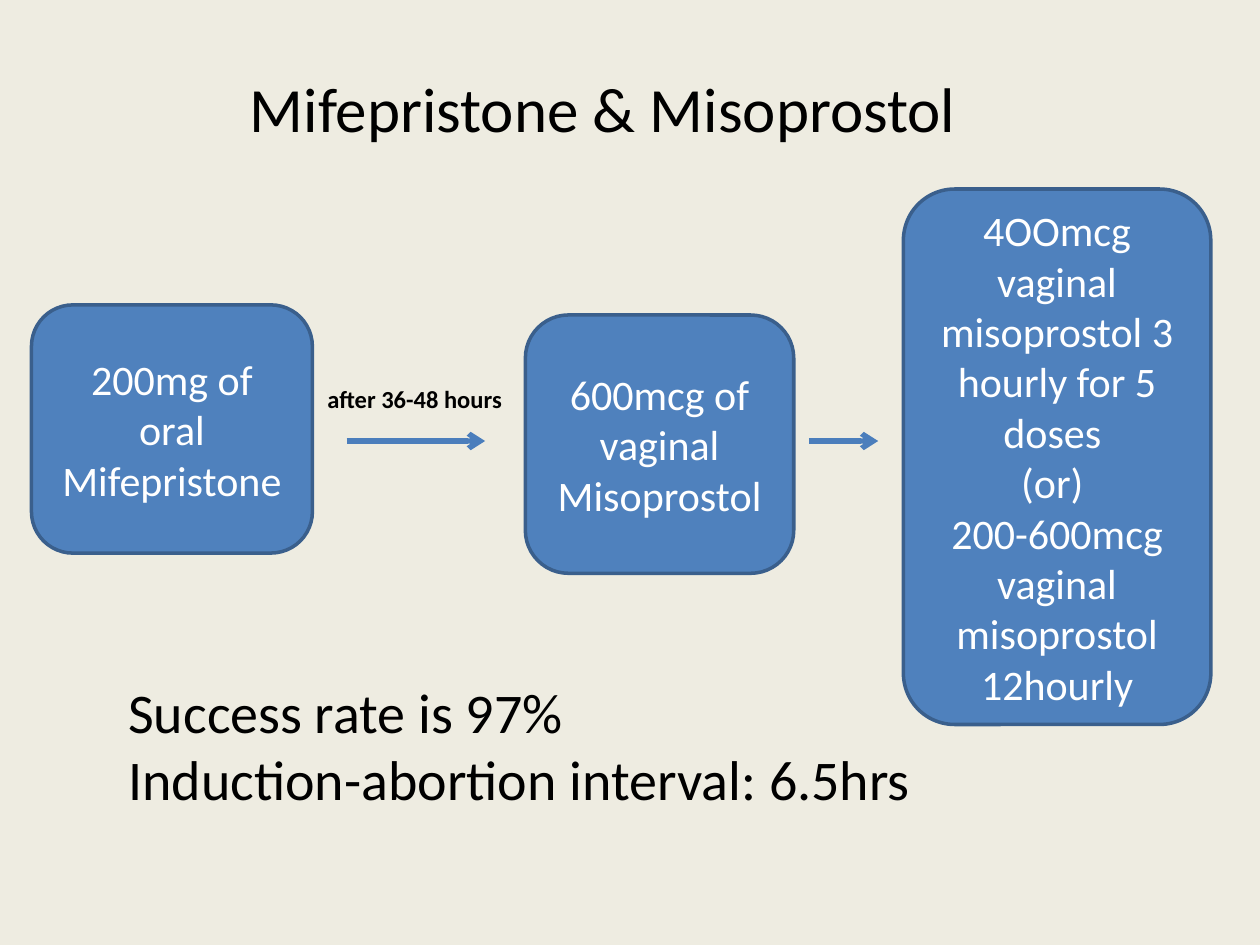
"""Build the slide on mifepristone and misoprostol dosing."""
from dataclasses import dataclass

from lxml import etree
from pptx import Presentation
from pptx import util as u
from pptx.dml.color import RGBColor
from pptx.enum import shapes, text
from pptx.oxml import ns

WIDE, HIGH = u.Inches(10), u.Inches(7.5)
COLS, ROWS = 40, 30
FONT = "Calibri"
HUES = {
    "back": "EEECE1",
    "box": "4F81BD",
    "edge": "3A5F8C",
    "arrow": "4B7EBC",
    "ink": "000000",
    "pale": "FFFFFF",
}


@dataclass(frozen=True)
class Area:
    col: float
    row: float
    cols: float
    rows: float

    def spans(self) -> tuple:
        return across(self.col), down(self.row), across(self.cols), down(self.rows)


@dataclass(frozen=True)
class Note:
    area: Area
    lines: tuple
    size: int
    bold: bool = False
    align: text.PP_ALIGN = text.PP_ALIGN.LEFT


@dataclass(frozen=True)
class Step:
    area: Area
    lines: tuple


@dataclass(frozen=True)
class Arrow:
    start: float
    end: float
    row: float


NOTES = (
    Note(Area(2, 2, 34.28, 2.84), ("Mifepristone & Misoprostol",), 36,
         align=text.PP_ALIGN.CENTER),
    Note(Area(10, 12, 7, 1.36), ("after 36-48 hours",), 14, bold=True),
    Note(Area(3.68, 21.32, 28, 4.72),
         ("Success rate is 97%", "Induction-abortion interval: 6.5hrs"), 32),
)
STEPS = (
    Step(Area(1, 9.68, 8.92, 7.88), ("200mg of oral Mifepristone",)),
    Step(Area(16.68, 10, 8.52, 8.2), ("600mcg of vaginal Misoprostol",)),
    Step(Area(28.68, 6, 9.76, 17),
         ("4OOmcg vaginal misoprostol 3 hourly for 5 doses ", "(or) ",
          "200-600mcg vaginal misoprostol 12hourly")),
)
ARROWS = (Arrow(11, 15.4, 14), Arrow(25.68, 27.88, 14))


def across(cols: float) -> int:
    return round(WIDE * cols / COLS)


def down(rows: float) -> int:
    return round(HIGH * rows / ROWS)


def hue(name: str) -> RGBColor:
    return RGBColor.from_string(HUES[name])


def write(frame, lines: tuple, size: int, ink: str, align, bold: bool = False) -> None:
    frame.word_wrap = True
    for i, line in enumerate(lines):
        para = frame.paragraphs[0] if i == 0 else frame.add_paragraph()
        para.alignment = align
        run = para.add_run()
        run.text = line
        font = run.font
        font.name, font.size, font.bold = FONT, u.Pt(size), bold
        font.color.rgb = hue(ink)


def add_note(slide, note: Note) -> None:
    frame = slide.shapes.add_textbox(*note.area.spans()).text_frame
    frame.auto_size = text.MSO_AUTO_SIZE.SHAPE_TO_FIT_TEXT
    write(frame, note.lines, note.size, "ink", note.align, note.bold)


def add_step(slide, step: Step) -> None:
    box = slide.shapes.add_shape(shapes.MSO_SHAPE.ROUNDED_RECTANGLE, *step.area.spans())
    box.shadow.inherit = False
    box.fill.solid()
    box.fill.fore_color.rgb = hue("box")
    box.line.color.rgb = hue("edge")
    box.line.width = u.Pt(2)
    box.text_frame.vertical_anchor = text.MSO_ANCHOR.MIDDLE
    write(box.text_frame, step.lines, 24, "pale", text.PP_ALIGN.CENTER)


def add_arrow(slide, arrow: Arrow) -> None:
    row = down(arrow.row)
    link = slide.shapes.add_connector(
        shapes.MSO_CONNECTOR.STRAIGHT, across(arrow.start), row, across(arrow.end), row)
    link.line.color.rgb = hue("arrow")
    link.line.width = u.Pt(3)
    props = link._element.spPr
    etree.SubElement(props.find(ns.qn("a:ln")), ns.qn("a:tailEnd"), type="arrow")
    etree.SubElement(props, ns.qn("a:effectLst"))


def main() -> None:
    deck = Presentation()
    deck.slide_width, deck.slide_height = WIDE, HIGH
    slide = deck.slides.add_slide(deck.slide_layouts[6])
    slide.background.fill.solid()
    slide.background.fill.fore_color.rgb = hue("back")
    title, *rest = NOTES
    add_note(slide, title)
    for step in STEPS:
        add_step(slide, step)
    for arrow in ARROWS:
        add_arrow(slide, arrow)
    for note in rest:
        add_note(slide, note)
    deck.save("out.pptx")


if __name__ == "__main__":
    main()
